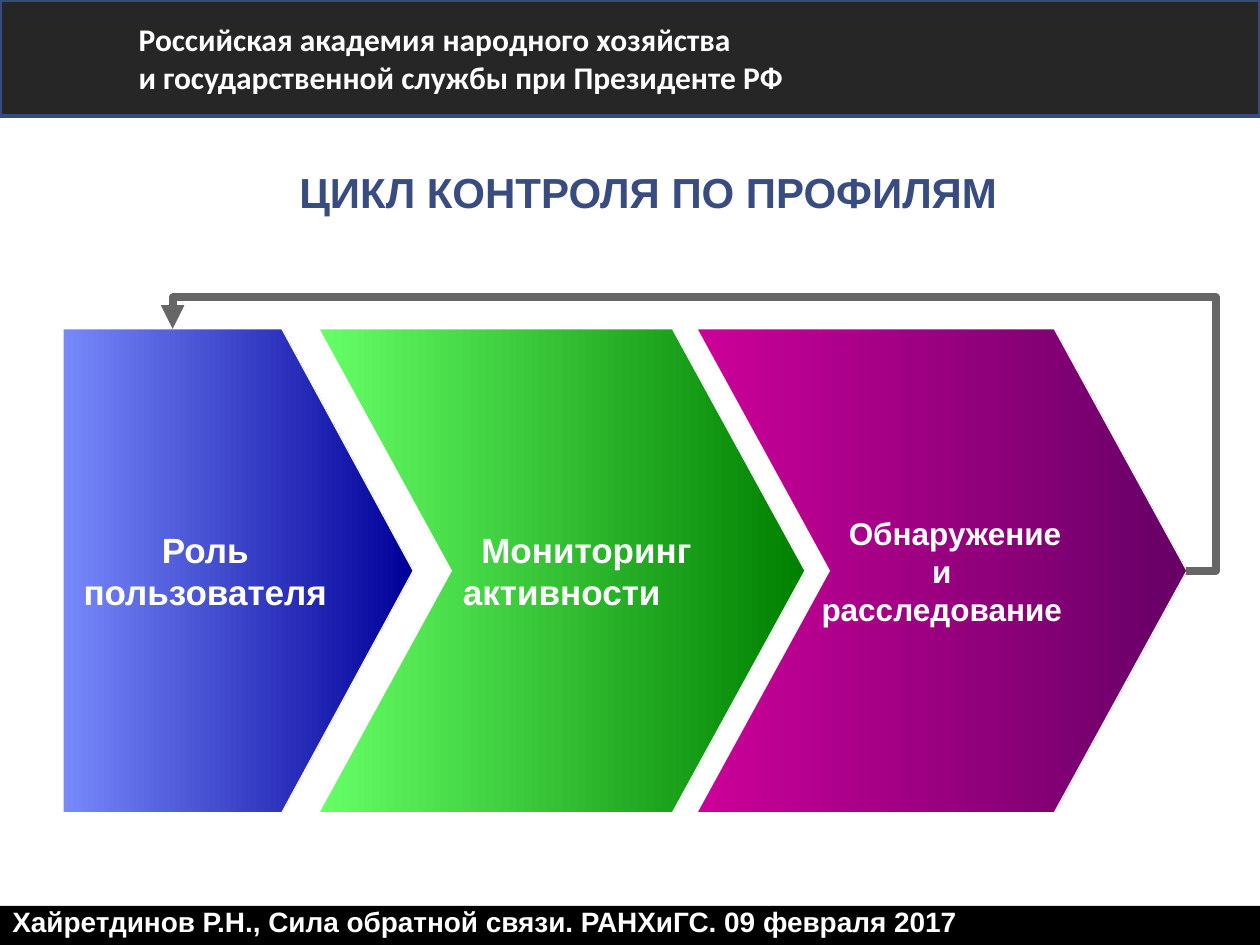
from lxml import etree
from pptx import Presentation
from pptx.dml.color import RGBColor
from pptx.enum.shapes import MSO_CONNECTOR, MSO_SHAPE
from pptx.enum.text import MSO_ANCHOR, PP_ALIGN
from pptx.oxml.ns import qn
from pptx.util import Inches, Pt

RECTANGLE, PENTAGON, CHEVRON = MSO_SHAPE.RECTANGLE, MSO_SHAPE.PENTAGON, MSO_SHAPE.CHEVRON
ELBOW = MSO_CONNECTOR.ELBOW
MIDDLE, TOP = MSO_ANCHOR.MIDDLE, MSO_ANCHOR.TOP
LEFT, CENTER = PP_ALIGN.LEFT, PP_ALIGN.CENTER

WHITE = RGBColor(0xFF, 0xFF, 0xFF)
BLACK = RGBColor(0x00, 0x00, 0x00)
CHARCOAL = RGBColor(0x26, 0x26, 0x26)
HEADER_BORDER = RGBColor(0x37, 0x4B, 0x7F)
TITLE_BLUE = RGBColor(0x38, 0x4C, 0x81)
LOOP_GRAY = RGBColor(0x66, 0x66, 0x66)
BLUE_LIGHT, BLUE_DARK = RGBColor(0x78, 0x89, 0xFB), RGBColor(0x00, 0x00, 0x99)
GREEN_LIGHT, GREEN_DARK = RGBColor(0x66, 0xFF, 0x66), RGBColor(0x00, 0x80, 0x00)
PURPLE_LIGHT, PURPLE_DARK = RGBColor(0xCC, 0x00, 0x99), RGBColor(0x66, 0x00, 0x66)


def write_text(frame, lines, size, font="Arial", color=WHITE, align=LEFT,
               anchor=MIDDLE, wrap=False, first_indent=0):
    frame.word_wrap = wrap
    frame.vertical_anchor = anchor
    for index, line in enumerate(lines):
        paragraph = frame.paragraphs[0] if index == 0 else frame.add_paragraph()
        paragraph.text = line
        paragraph.alignment = align
        if index == 0 and first_indent:
            paragraph._p.get_or_add_pPr().set("marL", str(Inches(first_indent)))
        paragraph.font.size = Pt(size)
        paragraph.font.name = font
        paragraph.font.bold = True
        paragraph.font.color.rgb = color


presentation = Presentation()
presentation.slide_width = Inches(10)
presentation.slide_height = Inches(7.5)
slide = presentation.slides.add_slide(presentation.slide_layouts[5])
shapes = slide.shapes

footer_bar = shapes.add_shape(RECTANGLE, Inches(0), Inches(7.19), Inches(10), Inches(0.31))
footer_bar.shadow.inherit = False
footer_bar.fill.solid()
footer_bar.fill.fore_color.rgb = BLACK
footer_bar.line.fill.background()

footer = shapes.add_textbox(Inches(0), Inches(7.13), Inches(7.8), Inches(0.37))
write_text(footer.text_frame,
           ["Хайретдинов Р.Н., Сила обратной связи. РАНХиГС. 09 февраля 2017"],
           16, anchor=TOP)

header = shapes.add_shape(RECTANGLE, Inches(0), Inches(0), Inches(10), Inches(0.92))
header.shadow.inherit = False
header.fill.solid()
header.fill.fore_color.rgb = CHARCOAL
header.line.color.rgb = HEADER_BORDER
header.line.width = Pt(2)
header.text_frame.margin_left = Inches(1.1)
write_text(header.text_frame,
           ["Российская академия народного хозяйства",
            "и государственной службы при Президенте РФ"],
           18, font="Calibri", wrap=True)

title = shapes.title
title.left, title.top = Inches(0.5), Inches(1.19)
title.width, title.height = Inches(9.29), Inches(0.67)
write_text(title.text_frame, ["ЦИКЛ КОНТРОЛЯ ПО ПРОФИЛЯМ"], 24,
           color=TITLE_BLUE, align=CENTER, wrap=True)

stages = [
    (PENTAGON, 0.5, 2.78, 0.375, BLUE_LIGHT, BLUE_DARK,
     ["Роль", "пользователя"], 20, 0),
    (CHEVRON, 2.53, 3.86, 0.274, GREEN_LIGHT, GREEN_DARK,
     ["Мониторинг", "активности"], 20, 0.39),
    (CHEVRON, 5.53, 3.89, 0.274, PURPLE_LIGHT, PURPLE_DARK,
     ["Обнаружение", "и", "расследование"], 18, 0.21),
]
for kind, left, width, point, light, dark, lines, size, first_indent in stages:
    stage = shapes.add_shape(kind, Inches(left), Inches(2.61), Inches(width), Inches(3.84))
    stage.shadow.inherit = False
    stage.adjustments[0] = point
    stage.fill.gradient()
    stage.fill.gradient_angle = 0
    for stop, color in zip(stage.fill.gradient_stops, (light, dark)):
        stop.color.rgb = color
    stage.line.color.rgb = WHITE
    stage.line.width = Pt(0.75)
    write_text(stage.text_frame, lines, size, align=CENTER, first_indent=first_indent)

loop = shapes.add_connector(ELBOW, Inches(1.37), Inches(2.61), Inches(9.41), Inches(4.53))
loop.line.color.rgb = LOOP_GRAY
loop.line.width = Pt(4.5)
properties = loop._element.spPr
properties.find(qn("a:xfrm")).set("rot", "10800000")
geometry = properties.find(qn("a:prstGeom"))
geometry.set("prst", "bentConnector4")
guides = geometry.find(qn("a:avLst"))
for name, value in (("adj1", -3000), ("adj2", 113000)):
    etree.SubElement(guides, qn("a:gd"), name=name, fmla=f"val {value}")
etree.SubElement(properties.find(qn("a:ln")), qn("a:tailEnd"), type="triangle")
etree.SubElement(properties, qn("a:effectLst"))

presentation.save("out.pptx")
